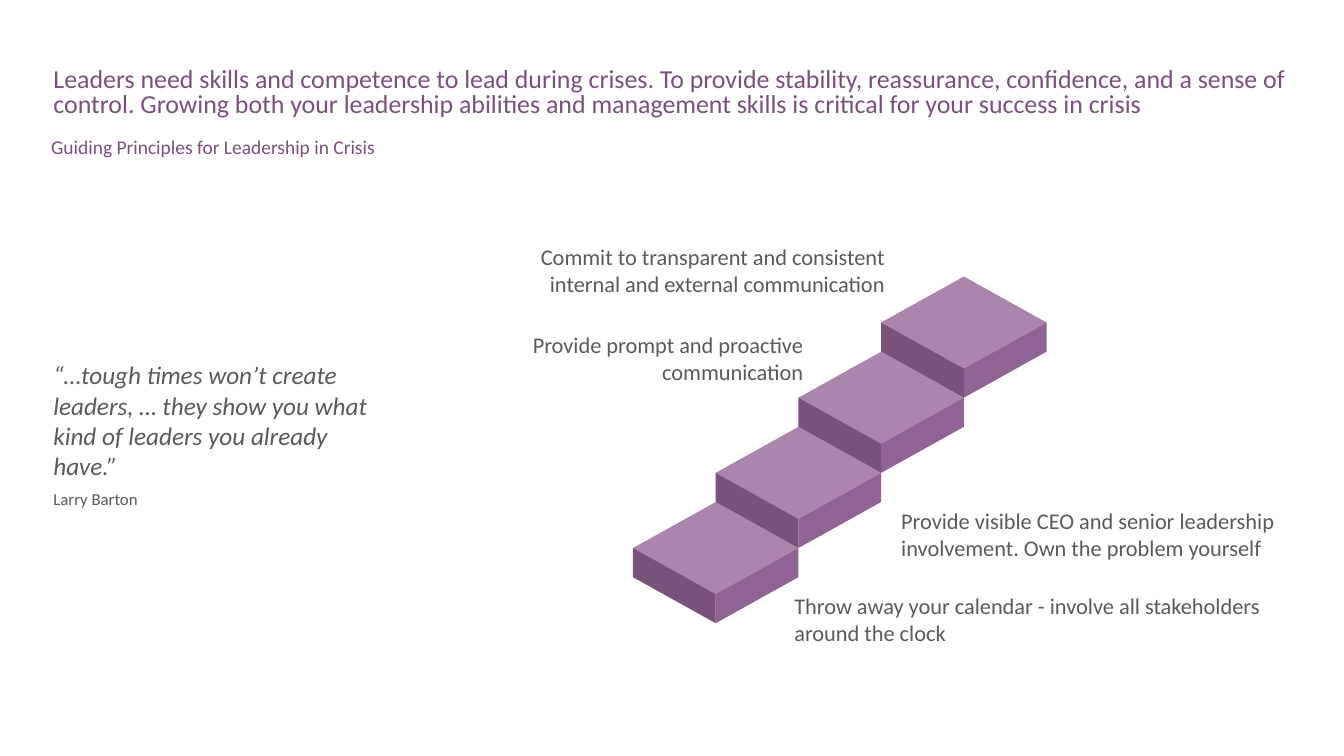
"""Build a slide with a quote and a four-step staircase of crisis leadership principles."""
from dataclasses import dataclass

from pptx import Presentation
from pptx.dml.color import RGBColor
from pptx.enum.text import MSO_ANCHOR, MSO_AUTO_SIZE, PP_ALIGN
from pptx.util import Pt


@dataclass(frozen=True)
class Theme:
    font: str = "Calibri"
    heading: str = "79527B"
    body: str = "595A59"
    step_top: str = "AB85AD"
    step_right: str = "916395"
    step_left: str = "79527B"
    title_size: float = 18.5
    subtitle_size: float = 13.9
    quote_size: float = 18
    author_size: float = 12
    label_size: float = 16


theme = Theme()


def place(shape, left, top, width, height, inset_x=7.2, inset_y=3.6, anchor=MSO_ANCHOR.TOP):
    """Position a text shape and return its text frame, ready for text."""
    shape.left, shape.top, shape.width, shape.height = Pt(left), Pt(top), Pt(width), Pt(height)
    frame = shape.text_frame
    frame.word_wrap = True
    frame.auto_size = MSO_AUTO_SIZE.NONE
    frame.vertical_anchor = anchor
    frame.margin_left = frame.margin_right = Pt(inset_x)
    frame.margin_top = frame.margin_bottom = Pt(inset_y)
    return frame


def write(paragraph, text, size, color, align=PP_ALIGN.LEFT, italic=False):
    """Fill a paragraph with text in the theme font."""
    paragraph.text = text
    paragraph.alignment = align
    paragraph.font.name = theme.font
    paragraph.font.size = Pt(size)
    paragraph.font.italic = italic
    paragraph.font.color.rgb = RGBColor.from_string(color)


presentation = Presentation()
presentation.slide_width, presentation.slide_height = Pt(960), Pt(540)
slide = presentation.slides.add_slide(presentation.slide_layouts[5])
shapes = slide.shapes

title = place(shapes.title, 31, 45.4, 903, 46).paragraphs[0]
write(title, "Leaders need skills and competence to lead during crises. To provide stability, "
      "reassurance, confidence, and a sense of control. Growing both your leadership abilities "
      "and management skills is critical for your success in crisis",
      theme.title_size, theme.heading)
title.line_spacing = 0.8

subtitle = place(shapes.add_textbox(0, 0, 0, 0), 29.5, 97.2, 904.5, 20).paragraphs[0]
write(subtitle, "Guiding Principles for Leadership in Crisis", theme.subtitle_size, theme.heading)
subtitle.line_spacing = 0.7

quote = place(shapes.add_textbox(0, 0, 0, 0), 31, 128.9, 251.3, 362.9, anchor=MSO_ANCHOR.MIDDLE)
write(quote.paragraphs[0], "“…tough times won’t create leaders, … they show you what kind of "
      "leaders you already have.”", theme.quote_size, theme.body, italic=True)
author = quote.add_paragraph()
write(author, "Larry Barton", theme.author_size, theme.body)
author.space_before = Pt(6)

STEP_COUNT = 4
HALF_WIDTH, HALF_HEIGHT, DEPTH = 59.1, 32.9, 20.8
RISE = HALF_HEIGHT + DEPTH
FIRST_LEFT, FIRST_TOP = 452.1, 358.6
staircase = shapes.add_group_shape()
for step in range(STEP_COUNT):
    left = FIRST_LEFT + step * HALF_WIDTH
    middle, right = left + HALF_WIDTH, left + 2 * HALF_WIDTH
    back = FIRST_TOP - step * RISE
    side, front = back + HALF_HEIGHT, back + 2 * HALF_HEIGHT
    faces = [
        (theme.step_top, [(middle, back), (right, side), (middle, front), (left, side)]),
        (theme.step_right, [(right, side), (right, side + DEPTH),
                            (middle, front + DEPTH), (middle, front)]),
        (theme.step_left, [(middle, front), (middle, front + DEPTH),
                           (left, side + DEPTH), (left, side)]),
    ]
    for color, corners in faces:
        points = [(Pt(x), Pt(y)) for x, y in corners]
        builder = staircase.shapes.build_freeform(*points[0])
        builder.add_line_segments(points[1:], close=True)
        face = builder.convert_to_shape()
        face.shadow.inherit = False
        face.fill.solid()
        face.fill.fore_color.rgb = RGBColor.from_string(color)
        face.line.fill.background()

labels = [
    (375.8, 172.1, 259.2, PP_ALIGN.RIGHT,
     "Commit to transparent and consistent internal and external communication"),
    (347, 235.4, 229.7, PP_ALIGN.RIGHT, "Provide prompt and proactive communication"),
    (640.8, 360.7, 334, PP_ALIGN.LEFT,
     "Provide visible CEO and senior leadership involvement. Own the problem yourself"),
    (564.5, 421.9, 356.4, PP_ALIGN.LEFT,
     "Throw away your calendar - involve all stakeholders around the clock"),
]
for left, top, width, align, text in labels:
    frame = place(shapes.add_textbox(0, 0, 0, 0), left, top, width, 41.8, 2.9, 1.4)
    write(frame.paragraphs[0], text, theme.label_size, theme.body, align)

presentation.save("out.pptx")
